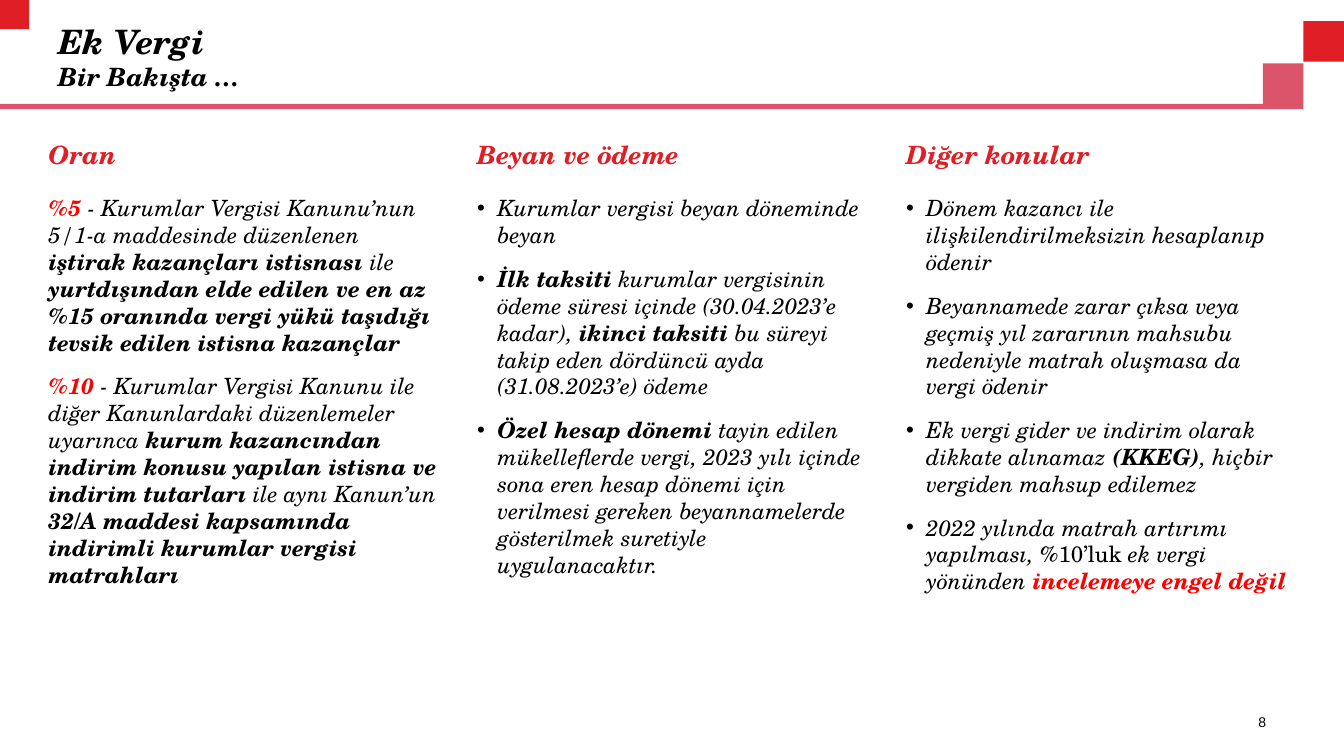
from lxml import etree
from pptx import Presentation
from pptx.dml.color import RGBColor
from pptx.enum import shapes, text
from pptx.oxml import ns
from pptx.util import Pt

BLACK = RGBColor(0x00, 0x00, 0x00)
CRIMSON = RGBColor(0xDF, 0x1E, 0x25)
ROSE = RGBColor(0xDB, 0x54, 0x69)
RED = RGBColor(0xFF, 0x00, 0x00)
SERIF, SANS = "TeX Gyre Schola", "Arial"

STYLES = {
    "plain": (BLACK, False, True),
    "bold": (BLACK, True, True),
    "alert": (RED, True, True),
    "heading": (CRIMSON, True, True),
    "upright": (BLACK, False, False),
}

TITLE, SUBTITLE = "Ek Vergi", "Bir Bakışta …"
PAGE_NUMBER = "8"

COLUMNS = [
    ("Oran", False, [
        [("%5 ", "alert"),
         ("- Kurumlar Vergisi Kanunu’nun 5/1-a maddesinde düzenlenen ", "plain"),
         ("iştirak kazançları istisnası ", "bold"),
         ("ile ", "plain"),
         ("yurtdışından elde edilen ve en az %15 oranında vergi yükü taşıdığı "
          "tevsik edilen istisna kazançlar", "bold")],
        [("%10 ", "alert"),
         ("- Kurumlar Vergisi Kanunu ile diğer Kanunlardaki düzenlemeler uyarınca ", "plain"),
         ("kurum kazancından indirim konusu yapılan istisna ve indirim tutarları", "bold"),
         (" ile aynı Kanun’un ", "plain"),
         ("32/A maddesi kapsamında indirimli kurumlar vergisi matrahları", "bold")],
    ]),
    ("Beyan ve ödeme", True, [
        [("Kurumlar vergisi beyan döneminde beyan", "plain")],
        [("İlk taksiti ", "bold"),
         ("kurumlar vergisinin ödeme süresi içinde (30.04.2023’e kadar), ", "plain"),
         ("ikinci taksiti ", "bold"),
         ("bu süreyi takip eden dördüncü ayda (31.08.2023’e) ödeme", "plain")],
        [("Özel hesap dönemi ", "bold"),
         ("tayin edilen mükelleflerde vergi, 2023 yılı içinde sona eren hesap dönemi "
          "için verilmesi gereken beyannamelerde gösterilmek suretiyle uygulanacaktır.", "plain")],
    ]),
    ("Diğer konular", True, [
        [("Dönem kazancı ile ilişkilendirilmeksizin hesaplanıp ödenir", "plain")],
        [("Beyannamede zarar çıksa veya geçmiş yıl zararının mahsubu nedeniyle "
          "matrah oluşmasa da vergi ödenir", "plain")],
        [("Ek vergi gider ve indirim olarak dikkate alınamaz ", "plain"),
         ("(KKEG)", "bold"),
         (", hiçbir vergiden mahsup edilemez", "plain")],
        [("2022 yılında matrah artırımı yapılması, ", "plain"),
         ("%10’luk ", "upright"),
         ("ek vergi yönünden ", "plain"),
         ("incelemeye engel değil", "alert")],
    ]),
]

PAGE_WIDTH, PAGE_HEIGHT = 960, 540
SQUARE = 29
RULE_TOP, RULE_HEIGHT = 74.2, 3.8
RULE_WIDTH = PAGE_WIDTH - SQUARE
BLOCKS = [
    (0, RULE_TOP, RULE_WIDTH, RULE_HEIGHT, ROSE),
    (0, 0, 20.8, 20.8, CRIMSON),
    (RULE_WIDTH - SQUARE, RULE_TOP - SQUARE, SQUARE, SQUARE, ROSE),
    (RULE_WIDTH, 15.1, SQUARE, SQUARE, CRIMSON),
]
COLUMN_LEFT, COLUMN_TOP, COLUMN_WIDTH, COLUMN_HEIGHT = 34.6, 99.4, 278, 366
COLUMN_STEP = 306.3
INDENT = 14.4


def add_text_box(page, left, top, width, height):
    frame = page.shapes.add_textbox(Pt(left), Pt(top), Pt(width), Pt(height)).text_frame
    frame.word_wrap = True
    frame.margin_left = frame.margin_top = frame.margin_right = frame.margin_bottom = 0
    return frame


def add_span(para, words, size, style, font=SERIF):
    span = para.add_run()
    span.text = words
    span.font.name, span.font.size = font, Pt(size)
    span.font.color.rgb, span.font.bold, span.font.italic = STYLES[style]


def add_bullet(para):
    props = para._p.get_or_add_pPr()
    props.set("marL", str(Pt(INDENT)))
    props.set("indent", str(-Pt(INDENT)))
    color = etree.SubElement(props, ns.qn("a:buClr"))
    etree.SubElement(color, ns.qn("a:srgbClr"), val=str(BLACK))
    etree.SubElement(props, ns.qn("a:buFont"), typeface=SANS)
    etree.SubElement(props, ns.qn("a:buChar"), char="•")


def add_column(page, left, heading, bulleted, entries):
    frame = add_text_box(page, left, COLUMN_TOP, COLUMN_WIDTH, COLUMN_HEIGHT)
    para = frame.paragraphs[0]
    para.space_after = Pt(12)
    add_span(para, heading, 18, "heading")
    for entry in entries:
        para = frame.add_paragraph()
        para.space_before = para.space_after = Pt(6)
        if bulleted:
            add_bullet(para)
        for words, style in entry:
            add_span(para, words, 16, style)


def main():
    deck = Presentation()
    deck.slide_width, deck.slide_height = Pt(PAGE_WIDTH), Pt(PAGE_HEIGHT)
    page = deck.slides.add_slide(deck.slide_layouts[6])

    for left, top, width, height, color in BLOCKS:
        block = page.shapes.add_shape(
            shapes.MSO_SHAPE.RECTANGLE, Pt(left), Pt(top), Pt(width), Pt(height))
        block.shadow.inherit = False
        block.fill.solid()
        block.fill.fore_color.rgb = color
        block.line.fill.background()

    title = add_text_box(page, 41.5, 15.1, 852.5, 51.8).paragraphs[0]
    add_span(title, TITLE, 24, "bold")
    title.add_line_break()
    add_span(title, SUBTITLE, 18, "bold")

    for index, column in enumerate(COLUMNS):
        add_column(page, COLUMN_LEFT + index * COLUMN_STEP, *column)

    number = add_text_box(page, 743.8, 509.8, 160.5, 12.2).paragraphs[0]
    number.alignment = text.PP_ALIGN.RIGHT
    add_span(number, PAGE_NUMBER, 10, "upright", SANS)

    deck.save("out.pptx")


if __name__ == "__main__":
    main()
